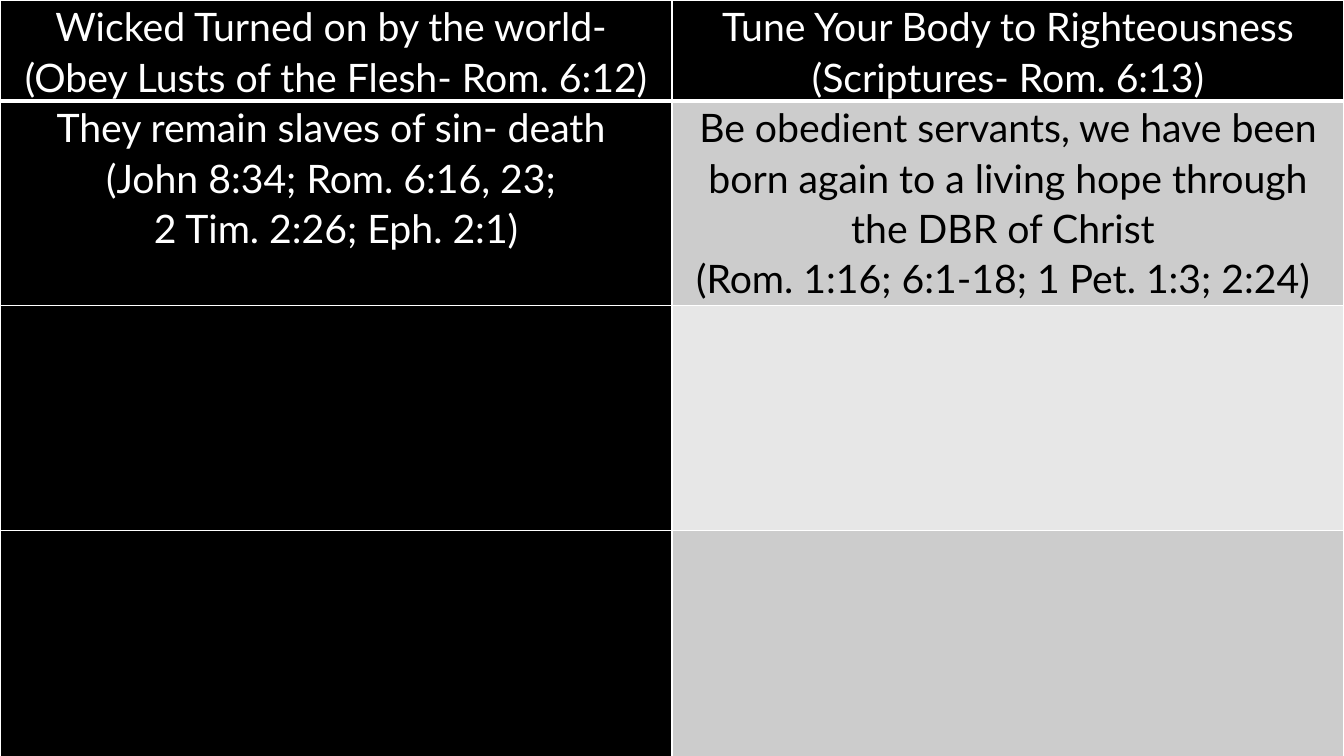
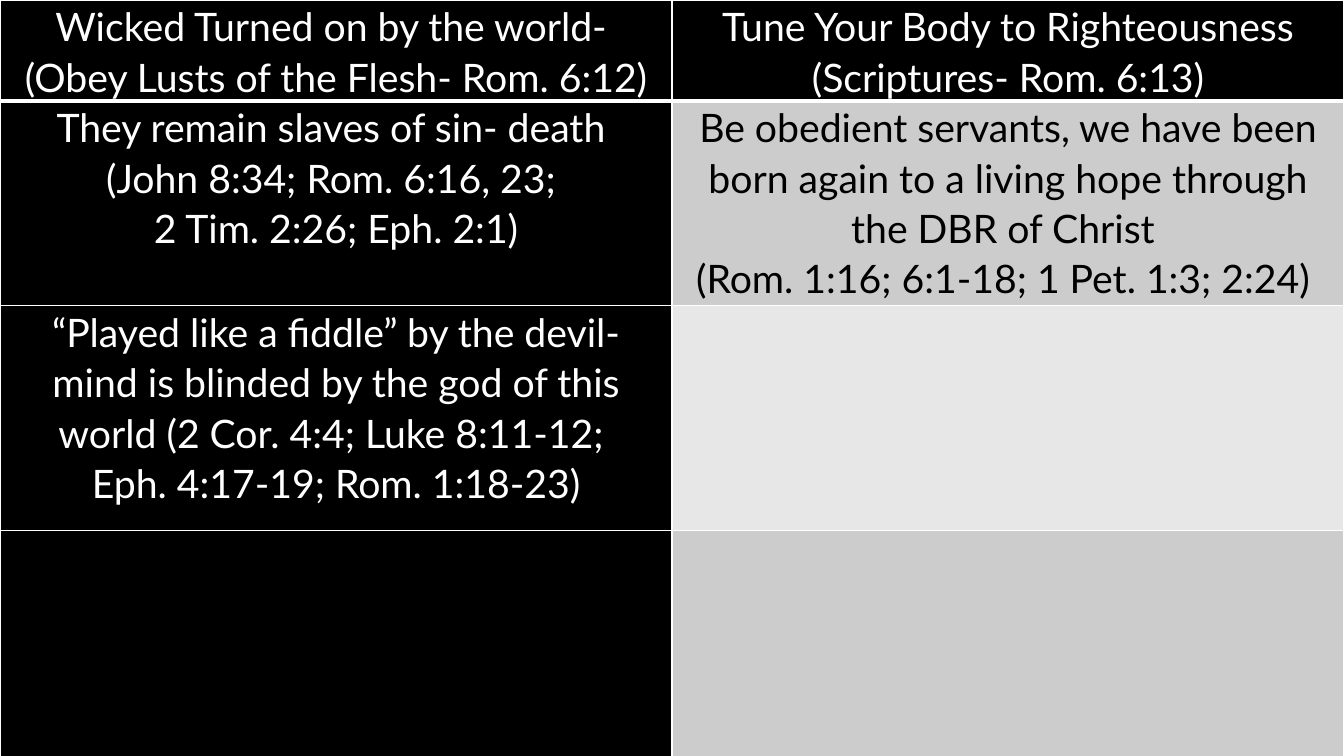
from dataclasses import dataclass

from pptx import Presentation
from pptx.dml.color import RGBColor
from pptx.enum.text import PP_ALIGN as Align
from pptx.oxml import parse_xml
from pptx.oxml.ns import nsdecls
from pptx.util import Emu, Pt

EMU_PER_PX = 9525
SLIDE_WIDTH, SLIDE_HEIGHT = 1280, 720
ROW_HEIGHTS = [95, 195, 214, 217]

HEADINGS = [
    ["Wicked Turned on by the world- ", "(Obey Lusts of the Flesh- Rom. 6:12)"],
    ["Tune Your Body to Righteousness (Scriptures- Rom. 6:13)"],
]
OUTCOMES = [
    ["They remain slaves of sin- death ", "(John 8:34; Rom. 6:16, 23; ", "2 Tim. 2:26; Eph. 2:1)"],
    ["Be obedient servants, we have been born again to a living hope "
     "through the DBR of Christ ", "(Rom. 1:16; 6:1-18; 1 Pet. 1:3; 2:24) "],
]
MINDS = [
    ["“Played like a fiddle” by the devil- mind is blinded by the god of this world "
     "(2 Cor. 4:4; Luke 8:11-12; ", "Eph. 4:17-19; Rom. 1:18-23)"],
    [],
]
EMPTY_ROW = [[], []]


@dataclass(frozen=True)
class Theme:
    dark: str = "000000"
    light: str = "FFFFFF"
    bands: tuple = ("CCCCCC", "E7E7E7")
    font: str = "Lato"
    text_size: int = 28
    line_spacing: float = 1.07
    rule: int = 1
    heading_rule: int = 3
    inset: int = 7


def px(length):
    return Emu(length * EMU_PER_PX)


def write(frame, lines, *, font, size, color, spacing, align=Align.CENTER):
    """Fill a text frame with one paragraph per line."""
    for index, line in enumerate(lines):
        para = frame.add_paragraph() if index else frame.paragraphs[0]
        para.alignment = align
        para.line_spacing = spacing
        span = para.add_run()
        span.text = line
        span.font.name = font
        span.font.size = Pt(size)
        span.font.color.rgb = RGBColor.from_string(color)


class ComparisonDeck:
    def __init__(self, theme):
        self.theme = theme
        self.deck = Presentation()
        self.deck.slide_width = px(SLIDE_WIDTH)
        self.deck.slide_height = px(SLIDE_HEIGHT)
        self.slide = None

    def add_slide(self):
        self.slide = self.deck.slides.add_slide(self.deck.slide_layouts[6])
        fill = self.slide.background.fill
        fill.solid()
        fill.fore_color.rgb = RGBColor.from_string(self.theme.dark)

    def add_table(self, rows):
        columns = len(rows[0])
        table = self.slide.shapes.add_table(
            len(rows), columns, 0, 0, px(SLIDE_WIDTH), px(sum(ROW_HEIGHTS))
        ).table
        table.first_row = table.horz_banding = False
        for column in table.columns:
            column.width = px(SLIDE_WIDTH // columns)
        for row_index, (row, height) in enumerate(zip(rows, ROW_HEIGHTS)):
            table.rows[row_index].height = px(height)
            for column_index, lines in enumerate(row):
                self.format_cell(table.cell(row_index, column_index), lines, row_index, column_index)

    def format_cell(self, cell, lines, row_index, column_index):
        theme = self.theme
        is_dark = row_index == 0 or column_index == 0
        background = theme.dark if is_dark else theme.bands[(row_index - 1) % len(theme.bands)]
        cell.margin_left = cell.margin_right = px(theme.inset)
        cell.margin_top = cell.margin_bottom = 0
        top = theme.heading_rule if row_index == 1 else theme.rule
        bottom = theme.heading_rule if row_index == 0 else theme.rule
        self.add_borders(cell, L=theme.rule, R=theme.rule, T=top, B=bottom)
        cell.fill.solid()
        cell.fill.fore_color.rgb = RGBColor.from_string(background)
        write(cell.text_frame, lines, font=theme.font, size=theme.text_size,
              color=theme.light if is_dark else theme.dark, spacing=theme.line_spacing)

    def add_borders(self, cell, **widths):
        """Add cell borders; must run before the fill, which follows them in the schema."""
        properties = cell._tc.get_or_add_tcPr()
        for side, width in widths.items():
            properties.append(parse_xml(
                f'<a:ln{side} {nsdecls("a")} w="{Pt(width)}"><a:solidFill>'
                f'<a:srgbClr val="{self.theme.light}"/></a:solidFill></a:ln{side}>'
            ))


def main():
    builder = ComparisonDeck(Theme())
    for third_row in (EMPTY_ROW, MINDS):
        builder.add_slide()
        builder.add_table([HEADINGS, OUTCOMES, third_row, EMPTY_ROW])
    builder.deck.save("out.pptx")


if __name__ == "__main__":
    main()
